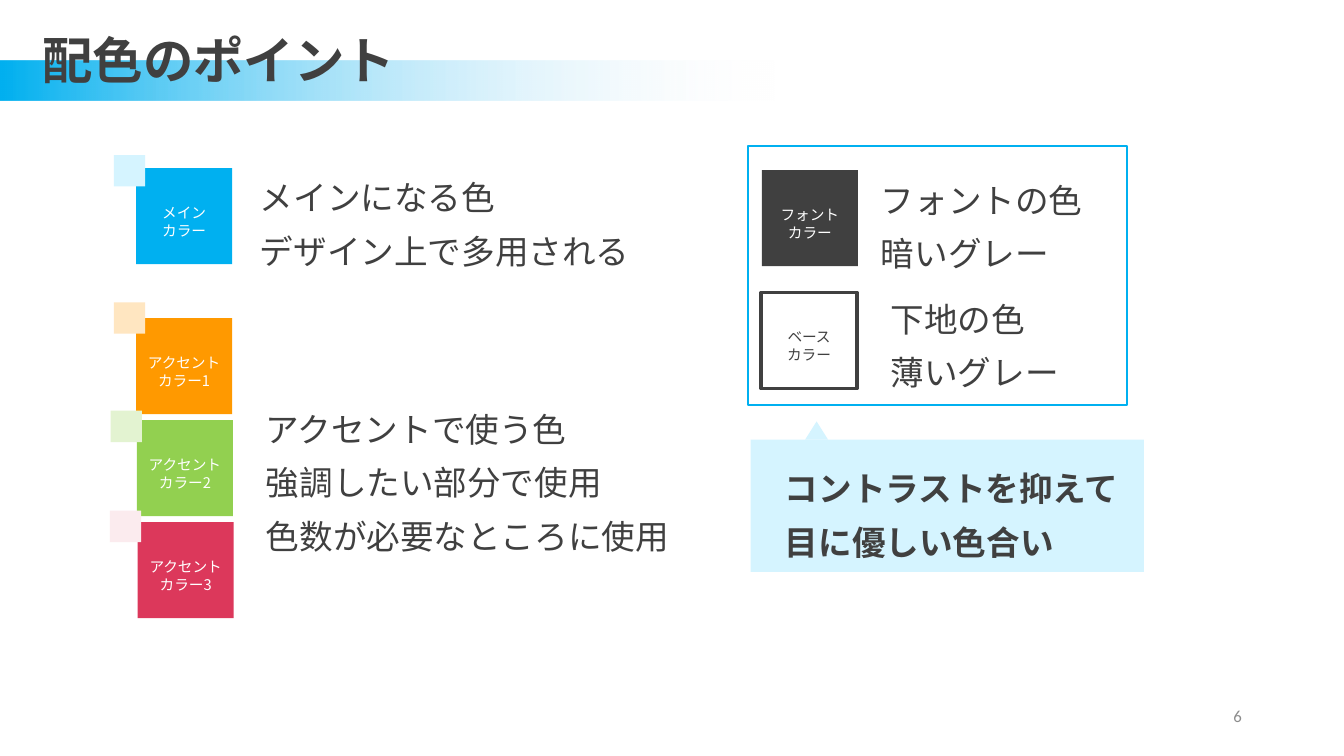
from dataclasses import dataclass

from lxml.etree import SubElement
from pptx import Presentation
from pptx.dml.color import RGBColor
from pptx.enum.shapes import MSO_SHAPE
from pptx.enum.text import MSO_ANCHOR, MSO_AUTO_SIZE, PP_ALIGN
from pptx.oxml.ns import qn
from pptx.util import Cm, Pt


@dataclass(frozen=True)
class Theme:
    main: str = "00B0F0"
    main_tint: str = "D5F4FF"
    orange: str = "FF9900"
    orange_tint: str = "FFE6C1"
    green: str = "92D050"
    green_tint: str = "E3F3D1"
    red: str = "DC385B"
    red_tint: str = "FBEBEE"
    dark: str = "404040"
    white: str = "FFFFFF"
    fade: str = "F6F8FC"
    muted: str = "8C8C8C"
    font: str = "Noto Sans CJK JP"
    number_font: str = "Calibri"
    title: float = 36
    body: float = 24
    number: float = 12
    label: float = 10.5


T = Theme()
TILE = 2.42
TINT = 0.79
LABEL_TOP = 0.77
LABEL_HEIGHT = 1.14


def rgb(color):
    return RGBColor.from_string(color)


def add_block(shapes, box, fill=None, line=None, width=1, kind=MSO_SHAPE.RECTANGLE):
    sp = shapes.add_shape(kind, *map(Cm, box))
    sp.shadow.inherit = False
    if fill:
        sp.fill.solid()
        sp.fill.fore_color.rgb = rgb(fill)
    else:
        sp.fill.background()
    if line:
        sp.line.color.rgb = rgb(line)
        sp.line.width = Pt(width)
    else:
        sp.line.fill.background()
    return sp


def write(tf, text, size, color=T.dark, bold=False, font=T.font,
          align=PP_ALIGN.LEFT, spacing=None, wrap=False):
    tf.text = text
    tf.word_wrap = wrap
    tf.auto_size = MSO_AUTO_SIZE.NONE
    for p in tf.paragraphs:
        p.alignment = align
        if spacing:
            p.line_spacing = Pt(spacing)
        for r in p.runs:
            r.font.size = Pt(size)
            r.font.bold = bold
            r.font.color.rgb = rgb(color)
            r.font.name = font
            SubElement(r.font._element, qn("a:ea"), typeface=font)


def add_body(s, box, text, bold=False, wrap=False):
    tf = s.shapes.add_textbox(*map(Cm, box)).text_frame
    write(tf, text, T.body, bold=bold, spacing=38.4, wrap=wrap)


def add_swatch(s, left, top, label, fill, color=T.white, line=None):
    shapes = s.shapes.add_group_shape().shapes
    add_block(shapes, (left, top, TILE, TILE), fill, line, 2.5)
    box = (left, top + LABEL_TOP, TILE, LABEL_HEIGHT)
    tf = shapes.add_textbox(*map(Cm, box)).text_frame
    write(tf, label, T.label, color, align=PP_ALIGN.CENTER)


def add_tint(s, left, top, color):
    add_block(s.shapes, (left, top, TINT, TINT), color)


def add_header(s, left, top, width, height):
    band = add_block(s.shapes, (left, top + 1.52, width, height - 1.52))
    band.fill.gradient()
    band.fill.gradient_angle = 180
    stops = zip(band.fill.gradient_stops, ((0.23, T.fade), (1, T.main)))
    for stop, (position, color) in stops:
        stop.position = position
        stop.color.rgb = rgb(color)
    faded = next(band._element.iter(qn("a:srgbClr")))
    SubElement(faded, qn("a:alpha"), val="0")
    s.shapes._spTree.insert(2, band._element)

    title = s.shapes.title
    title.left, title.top = Cm(left + 0.81), Cm(top + 0.43)
    title.width, title.height = Cm(9.5), Cm(1.96)
    write(title.text_frame, "配色のポイント", T.title, bold=True, spacing=48)
    title.text_frame.vertical_anchor = MSO_ANCHOR.TOP


def add_main_color(s, left, top):
    add_swatch(s, left, top, "メイン\nカラー", T.main)
    add_tint(s, left - 0.56, top - 0.33, T.main_tint)
    add_body(s, (left + 2.87, top - 0.25, 9.9, 2.97),
             "メインになる色\nデザイン上で多用される")


def add_accent_colors(s, left, top):
    accents = (
        (T.orange, T.orange_tint, -0.56, -0.4),
        (T.green, T.green_tint, -0.66, -0.24),
        (T.red, T.red_tint, -0.7, -0.29),
    )
    for i, (fill, tint, dx, dy) in enumerate(accents):
        x, y = left + 0.02 * i, top + 2.57 * i
        add_swatch(s, x, y, f"アクセント\nカラー{i + 1}", fill)
        add_tint(s, x + dx, y + dy, tint)
    add_body(s, (left + 3.02, top + 1.81, 10.77, 4.24),
             "アクセントで使う色\n強調したい部分で使用\n色数が必要なところに使用")


def add_text_colors(s, left, top, width, height):
    add_swatch(s, left + 0.35, top + 0.61, "フォント\nカラー", T.dark)
    add_body(s, (left + 3.1, top + 0.38, 5.64, 2.97), "フォントの色\n暗いグレー")
    add_swatch(s, left + 0.33, top + 3.69, "ベース\nカラー",
               T.white, T.dark, T.dark)
    add_body(s, (left + 3.35, top + 3.38, 4.78, 2.97), "下地の色\n薄いグレー")
    add_block(s.shapes, (left, top, width, height), line=T.main)


def add_callout(s, left, top, width, height):
    shapes = s.shapes.add_group_shape().shapes
    add_block(shapes, (left, top, width, height), T.main_tint)
    add_block(shapes, (left + 1.37, top - 0.46, 0.58, 0.46), T.main_tint,
              kind=MSO_SHAPE.ISOSCELES_TRIANGLE)
    add_body(s, (left + 0.61, top + 0.25, 9.07, 2.87),
             "コントラストを抑えて\n目に優しい色合い", bold=True, wrap=True)


def add_page_number(s, left, top, width, height):
    tf = s.shapes.add_textbox(*map(Cm, (left, top, width, height))).text_frame
    write(tf, "6", T.number, T.muted, font=T.number_font, align=PP_ALIGN.RIGHT)
    tf.vertical_anchor = MSO_ANCHOR.MIDDLE


def main():
    prs = Presentation()
    prs.slide_width, prs.slide_height = Cm(33.87), Cm(19.05)
    s = prs.slides.add_slide(prs.slide_layouts[5])
    add_header(s, 0, 0, 25.4, 2.54)
    add_main_color(s, 3.43, 4.24)
    add_accent_colors(s, 3.43, 8.02)
    add_text_colors(s, 18.85, 3.68, 9.55, 6.53)
    add_callout(s, 18.92, 11.08, 9.91, 3.33)
    add_page_number(s, 29.26, 17.53, 2.29, 1.02)
    prs.save("out.pptx")


if __name__ == "__main__":
    main()
